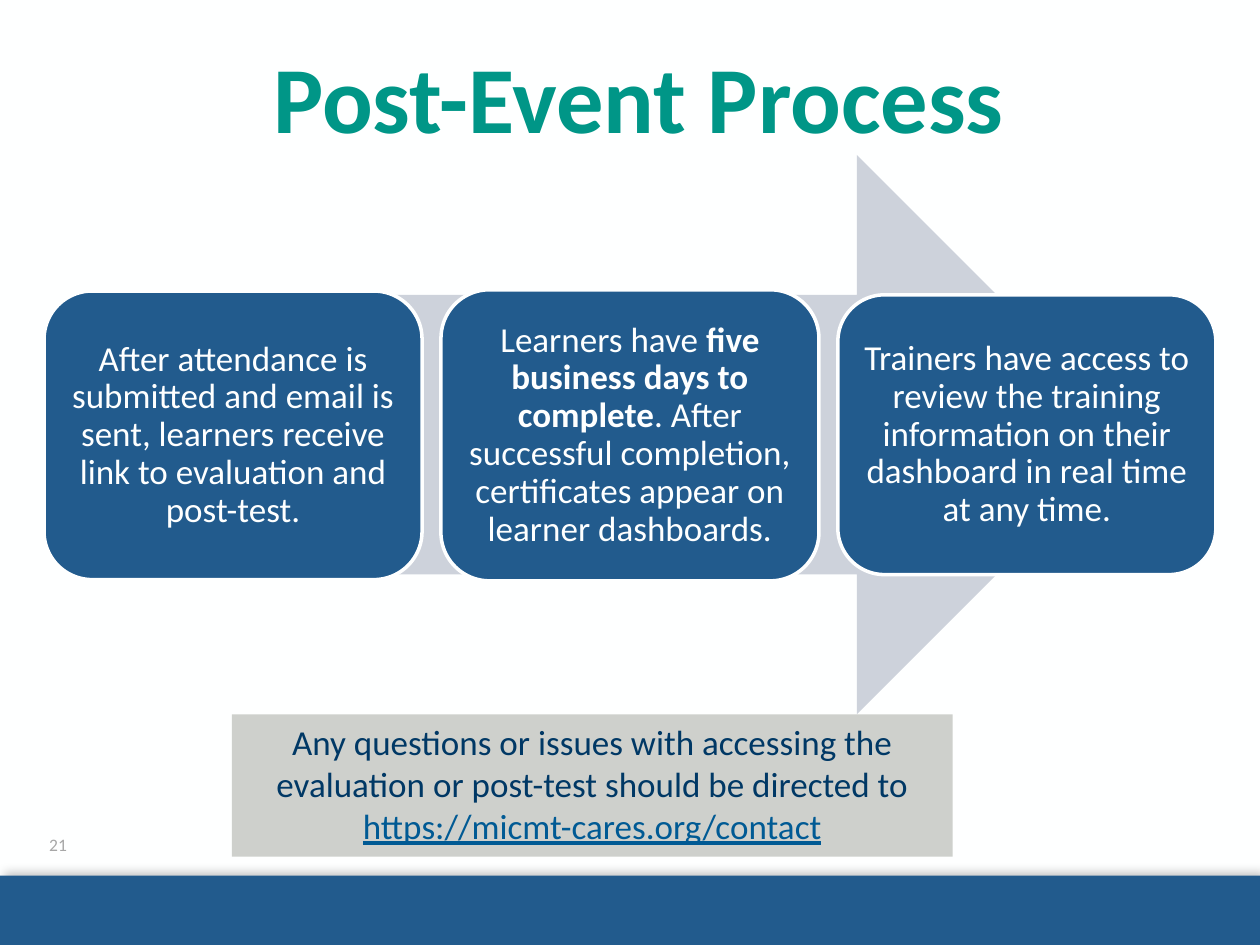
"""Build the Post-Event Process slide."""
from lxml.etree import SubElement
from pptx import Presentation
from pptx.dml.color import RGBColor
from pptx.enum.shapes import MSO_SHAPE
from pptx.enum.text import MSO_ANCHOR, PP_ALIGN
from pptx.oxml.ns import qn
from pptx.util import Inches, Pt

WHITE = RGBColor(0xFE, 0xFF, 0xFF)
BLUE = RGBColor(0x22, 0x5B, 0x8D)
NAVY = RGBColor(0x00, 0x38, 0x65)
LINK = RGBColor(0x00, 0x5A, 0x94)
TEAL = RGBColor(0x00, 0x96, 0x87)
PALE = RGBColor(0xCD, 0xD2, 0xDB)
STONE = RGBColor(0xCE, 0xD0, 0xCC)
GRAY = RGBColor(0xA7, 0xA7, 0xA7)

TITLE = "Post-Event Process"
PAGE = "21"
NOTE = "Any questions or issues with accessing the evaluation or post-test should be directed to "
SITE = "https://micmt-cares.org/contact"
STEPS = [
    (2.31, 2.29, ["After attendance is submitted and email is sent, learners receive link to evaluation and post-test."]),
    (2.30, 2.31, ["Learners have ", "five business days to complete",
                  ". After successful completion, certificates appear on learner dashboards."]),
    (2.34, 2.22, ["Trainers have access to review the training information on their dashboard in real time at any time."]),
]
LEFT, WIDE, GAP = 0.35, 3, 0.15


def add_form(slide, kind, box, fill):
    form = slide.shapes.add_shape(kind, *map(Inches, box))
    form.shadow.inherit = False
    form.fill.solid()
    form.fill.fore_color.rgb = fill
    form.line.fill.background()
    return form


def add_text(shape, parts, size, color, pad=(0.1, 0.05), anchor=MSO_ANCHOR.TOP, space=None):
    frame = shape.text_frame
    frame.word_wrap = True
    frame.vertical_anchor = anchor
    frame.margin_left = frame.margin_right = Inches(pad[0])
    frame.margin_top = frame.margin_bottom = Inches(pad[1])
    para = frame.paragraphs[0]
    para.alignment = PP_ALIGN.CENTER
    para.line_spacing = space
    para.font.name = "Calibri"
    para.font.size = Pt(size)
    para.font.color.rgb = color
    for part in parts:
        para.add_run().text = part
    return para


def add_shade(shape):
    effects = shape._element.spPr.find(qn("a:effectLst"))
    shade = SubElement(effects, qn("a:outerShdw"), blurRad=str(Pt(6)), dist=str(Pt(3)),
                       dir=str(315 * 60000), rotWithShape="0")
    color = SubElement(shade, qn("a:srgbClr"), val="000000")
    SubElement(color, qn("a:alpha"), val="24000")


def main():
    deck = Presentation()
    deck.slide_width, deck.slide_height = Inches(10), Inches(7.5)
    slide = deck.slides.add_slide(deck.slide_layouts[6])
    slide.background.fill.solid()
    slide.background.fill.fore_color.rgb = WHITE

    add_shade(add_form(slide, MSO_SHAPE.RECTANGLE, (0, 6.95, 10, 0.55), BLUE))
    page = slide.shapes.add_textbox(*map(Inches, (0.25, 6.5, 0.42, 0.4)))
    add_text(page, [PAGE], 10, GRAY, (0, 0.05), MSO_ANCHOR.MIDDLE)

    note = add_form(slide, MSO_SHAPE.RECTANGLE, (1.84, 5.67, 5.72, 1.13), STONE)
    site = add_text(note, [NOTE, SITE], 20, NAVY).runs[1]
    site.font.color.rgb = LINK
    site.font.underline = True

    title = slide.shapes.add_textbox(*map(Inches, (0.35, 0.2, 9.44, 1.03)))
    add_text(title, [TITLE], 54, TEAL, space=1.07).font.bold = True

    add_form(slide, MSO_SHAPE.RIGHT_ARROW, (1.11, 1.23, 7.91, 4.44), PALE)
    for i, (top, high, parts) in enumerate(STEPS):
        box = (LEFT + i * (WIDE + GAP), top, WIDE, high)
        step = add_form(slide, MSO_SHAPE.ROUNDED_RECTANGLE, box, BLUE)
        step.line.color.rgb = WHITE
        step.line.width = Pt(2)
        para = add_text(step, parts, 20, WHITE, (0.08, 0.08), MSO_ANCHOR.MIDDLE, 0.9)
        for run in para.runs[1:2]:
            run.font.bold = True

    deck.save("out.pptx")


if __name__ == "__main__":
    main()
